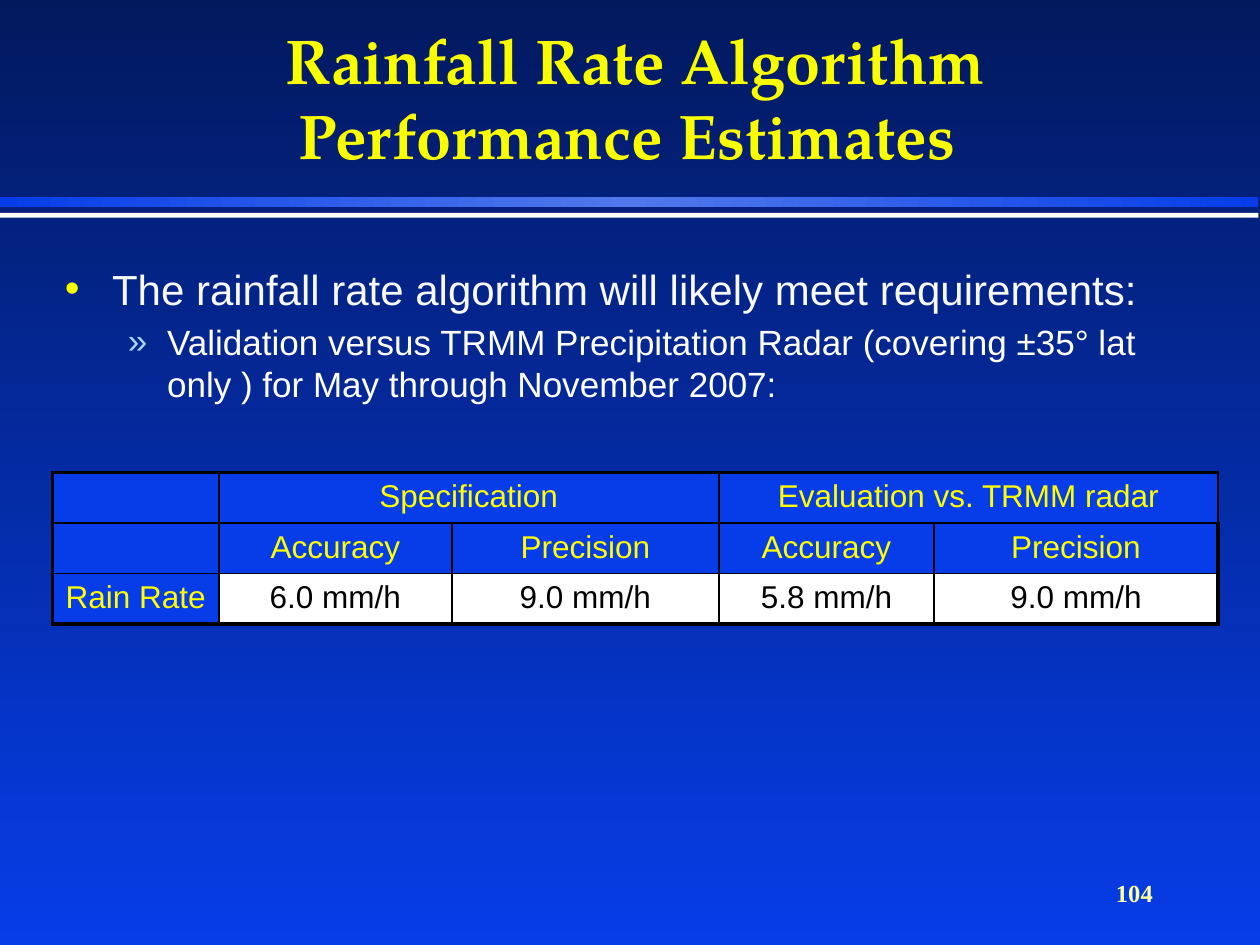
from copy import deepcopy
from dataclasses import dataclass

from lxml import etree
from pptx import Presentation
from pptx import util as u
from pptx.dml.color import RGBColor
from pptx.enum import shapes, text
from pptx.oxml.ns import qn


@dataclass(frozen=True)
class Theme:
    night: str = "02195E"
    blue: str = "063DE8"
    glow: str = "5078EC"
    white: str = "FFFFFF"
    body: str = "F8F8F8"
    black: str = "000000"
    title: str = "FAFD00"
    header: str = "FFFF00"
    number: str = "FFFF99"
    sub_bullet: str = "A2D7FF"
    title_font: str = "TeX Gyre Pagella"
    body_font: str = "Arial"
    number_font: str = "Times New Roman"
    title_size: int = 36
    point_size: int = 24
    sub_size: int = 20
    table_size: int = 18
    number_size: int = 14
    thin: float = 1
    thick: float = 2.25


class SlideBuilder:
    def __init__(self, page, theme):
        self.page = page
        self.theme = theme

    def gradient(self, fill, element, colors, angle):
        """Spread the colours evenly; element is the XML that holds the fill."""
        fill.gradient()
        fill.gradient_angle = angle
        stop_list = element.find(".//" + qn("a:gsLst"))
        while len(stop_list) < len(colors):
            stop_list.append(deepcopy(stop_list[-1]))
        for index, (stop, color) in enumerate(zip(fill.gradient_stops, colors)):
            stop.color.rgb = RGBColor.from_string(color)
            stop.position = index / (len(colors) - 1)

    def background(self, colors):
        self.gradient(self.page.background.fill, self.page._element, colors, 270)

    def band(self, top, height, colors):
        bar = self.page.shapes.add_shape(
            shapes.MSO_SHAPE.RECTANGLE, 0, u.Cm(top), u.Cm(25.37), u.Cm(height))
        bar.shadow.inherit = False
        bar.line.fill.background()
        if len(colors) > 1:
            self.gradient(bar.fill, bar._element, colors, 0)
        else:
            bar.fill.solid()
            bar.fill.fore_color.rgb = RGBColor.from_string(colors[0])

    def style(self, para, font, size, color, bold=False, align=None):
        para.alignment = align
        for target in [para, *para.runs]:
            target.font.name = font
            target.font.size = u.Pt(size)
            target.font.bold = bold
            target.font.color.rgb = RGBColor.from_string(color)

    def text_box(self, left, top, width, height, anchor, content):
        box = self.page.shapes.add_textbox(*map(u.Cm, (left, top, width, height)))
        frame = box.text_frame
        frame.word_wrap = True
        frame.vertical_anchor = anchor
        frame.text = content
        return frame

    def bullet(self, para, mark, color, margin, hang):
        properties = para._p.get_or_add_pPr()
        properties.set("marL", str(u.Cm(margin)))
        properties.set("indent", str(-u.Cm(hang)))
        bullet_color = etree.SubElement(properties, qn("a:buClr"))
        etree.SubElement(bullet_color, qn("a:srgbClr"), val=color)
        etree.SubElement(properties, qn("a:buFont"), typeface=self.theme.body_font)
        etree.SubElement(properties, qn("a:buChar"), char=mark)

    def borders(self, cell, thick_sides):
        properties = cell._tc.get_or_add_tcPr()
        for side in "LRTB":
            width = self.theme.thick if side in thick_sides else self.theme.thin
            line = etree.SubElement(properties, qn(f"a:ln{side}"), w=str(u.Pt(width)))
            fill = etree.SubElement(line, qn("a:solidFill"))
            etree.SubElement(fill, qn("a:srgbClr"), val=self.theme.black)

    def table(self, left, top, widths, row_height, rows, merges):
        """Draw a table whose last row holds values and whose rim is thick."""
        theme = self.theme
        last_row, last_column = len(rows) - 1, len(widths) - 1
        grid = self.page.shapes.add_table(
            len(rows), len(widths), u.Cm(left), u.Cm(top),
            u.Cm(sum(widths)), u.Cm(row_height * len(rows))).table
        for column, width in zip(grid.columns, widths):
            column.width = u.Cm(width)
        for row, labels in enumerate(rows):
            grid.rows[row].height = u.Cm(row_height)
            for column, label in enumerate(labels):
                cell = grid.cell(row, column)
                rim = {"L": column == 0, "R": column == last_column,
                       "T": row == 0, "B": row == last_row}
                self.borders(cell, [side for side in rim if rim[side]])
                is_value = row == last_row and column > 0
                cell.fill.solid()
                cell.fill.fore_color.rgb = RGBColor.from_string(
                    theme.white if is_value else theme.blue)
                cell.margin_left = cell.margin_right = u.Cm(0.13)
                cell.text_frame.text = label
                self.style(cell.text_frame.paragraphs[0], theme.body_font,
                           theme.table_size,
                           theme.black if is_value else theme.header,
                           align=text.PP_ALIGN.CENTER)
        for row, first, last in merges:
            grid.cell(row, first).merge(grid.cell(row, last))


def main():
    theme = Theme()
    deck = Presentation()
    deck.slide_width, deck.slide_height = u.Cm(25.4), u.Cm(19.05)
    slide = SlideBuilder(deck.slides.add_slide(deck.slide_layouts[6]), theme)

    slide.background([theme.night, theme.blue])
    slide.band(3.97, 0.2, [theme.blue, theme.glow, theme.blue])
    slide.band(4.29, 0.1, [theme.white])

    title = slide.text_box(1.9, 0.42, 21.8, 3.18, text.MSO_ANCHOR.BOTTOM,
                           "Rainfall Rate Algorithm\vPerformance Estimates ")
    slide.style(title.paragraphs[0], theme.title_font, theme.title_size,
                theme.title, bold=True, align=text.PP_ALIGN.CENTER)

    points = slide.text_box(
        1.06, 5.18, 23.5, 4, text.MSO_ANCHOR.TOP,
        "The rainfall rate algorithm will likely meet requirements:\n"
        "Validation versus TRMM Precipitation Radar (covering ±35° lat only ) "
        "for May through November 2007:")
    point, sub_point = points.paragraphs
    slide.bullet(point, "•", theme.title, 0.95, 0.95)
    slide.style(point, theme.body_font, theme.point_size, theme.body)
    sub_point.level = 1
    slide.bullet(sub_point, "»", theme.sub_bullet, 2.06, 0.79)
    slide.style(sub_point, theme.body_font, theme.sub_size, theme.white)
    sub_point.space_before = u.Pt(4)

    measures = ["Accuracy", "Precision"]
    slide.table(
        1.06, 9.53, [3.35, 4.7, 5.38, 4.34, 5.72], 0.97,
        [["", "Specification", "", "Evaluation vs. TRMM radar", ""],
         ["", *measures, *measures],
         ["Rain Rate", "6.0 mm/h", "9.0 mm/h", "5.8 mm/h", "9.0 mm/h"]],
        merges=[(0, 1, 2), (0, 3, 4)])

    number = slide.text_box(18.2, 17.36, 5.29, 1.27, text.MSO_ANCHOR.MIDDLE, "104")
    slide.style(number.paragraphs[0], theme.number_font, theme.number_size,
                theme.number, bold=True, align=text.PP_ALIGN.RIGHT)

    deck.save("out.pptx")


if __name__ == "__main__":
    main()
